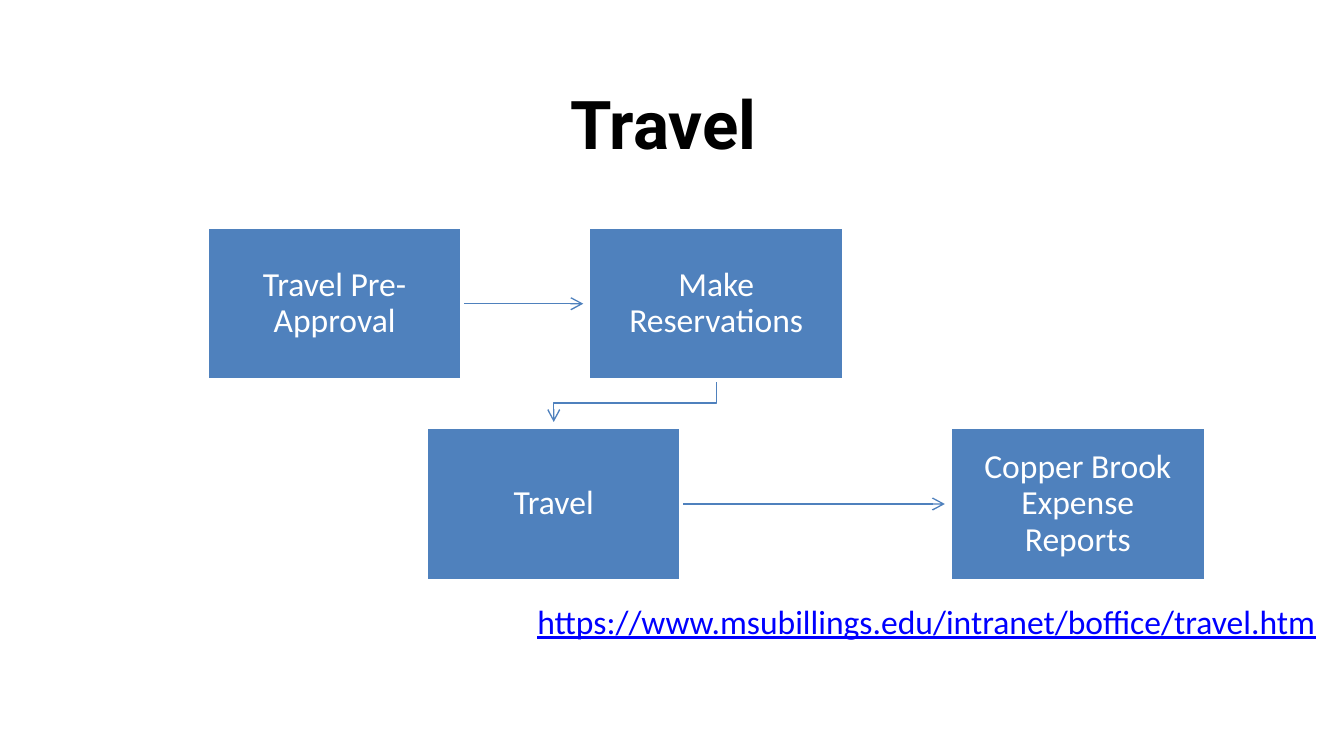
import pptx
import pptx.util
import pptx.dml.color
import pptx.enum.shapes
import pptx.enum.text
import pptx.oxml.ns
import lxml.etree
from dataclasses import dataclass


@dataclass(frozen=True)
class Theme:
    blue: str = "4F81BD"
    white: str = "FFFFFF"
    black: str = "000000"
    link: str = "0000FF"
    heading_font: str = "Roboto"
    body_font: str = "Calibri"
    heading_size: int = 36
    body_size: int = 18
    border: float = 2
    arrow: float = 0.75


theme = Theme()
rgb = pptx.dml.color.RGBColor.from_string
qn = pptx.oxml.ns.qn
center = pptx.enum.text.PP_ALIGN.CENTER
middle = pptx.enum.text.MSO_ANCHOR.MIDDLE


def write(box, text, font_name, size, color):
    box.text_frame.word_wrap = True
    para = box.text_frame.paragraphs[0]
    para.text = text
    para.font.name = font_name
    para.font.size = pptx.util.Pt(size)
    para.font.color.rgb = rgb(color)
    return para


def style_arrow(arrow):
    arrow.line.color.rgb = rgb(theme.blue)
    arrow.line.width = pptx.util.Pt(theme.arrow)
    line = arrow.line._get_or_add_ln()
    lxml.etree.SubElement(line, qn("a:tailEnd"), type="arrow")


deck = pptx.Presentation()
deck.slide_width = pptx.util.Inches(10)
deck.slide_height = deck.slide_width * 9 // 16
page = deck.slides.add_slide(deck.slide_layouts[6])
column = deck.slide_width / 100
row = deck.slide_height / 56.25

title = page.shapes.add_textbox(
    int(5 * column), int(4.4 * row), int(90 * column), int(9.4 * row))
title.text_frame.vertical_anchor = middle
para = write(title, "Travel ", theme.heading_font, theme.heading_size, theme.black)
para.alignment = center
para.font.bold = True

box_width, box_height = 19, 11.4
top_row, bottom_row = 16.9, 31.8
gap = 0.4
steps = [
    ("Travel Pre-Approval", 15.4, top_row),
    ("Make Reservations", 43.8, top_row),
    ("Travel", 31.7, bottom_row),
    ("Copper Brook Expense Reports", 70.7, bottom_row),
]

for start, end in ((steps[0], steps[1]), (steps[2], steps[3])):
    level = int((start[2] + box_height / 2) * row)
    arrow = page.shapes.add_connector(
        pptx.enum.shapes.MSO_CONNECTOR.STRAIGHT,
        int((start[1] + box_width) * column), level,
        int((end[1] - gap) * column), level)
    style_arrow(arrow)
    lxml.etree.SubElement(arrow._element.spPr, qn("a:effectLst"))

from_x = int((steps[1][1] + box_width / 2) * column)
to_x = int((steps[2][1] + box_width / 2) * column)
turn_y = int(30 * row)
builder = page.shapes.build_freeform(from_x, int((top_row + box_height) * row))
builder.add_line_segments(
    [(from_x, turn_y), (to_x, turn_y), (to_x, int((bottom_row - gap) * row))],
    close=False)
elbow = builder.convert_to_shape()
elbow.fill.background()
elbow.shadow.inherit = False
style_arrow(elbow)

for text, left, top in steps:
    box = page.shapes.add_shape(
        pptx.enum.shapes.MSO_SHAPE.RECTANGLE,
        int(left * column), int(top * row),
        int(box_width * column), int(box_height * row))
    box.shadow.inherit = False
    box.fill.solid()
    box.fill.fore_color.rgb = rgb(theme.blue)
    box.line.color.rgb = rgb(theme.white)
    box.line.width = pptx.util.Pt(theme.border)
    frame = box.text_frame
    frame.vertical_anchor = middle
    frame.margin_left = frame.margin_right = int(1.4 * column)
    frame.margin_top = frame.margin_bottom = int(1.4 * row)
    para = write(box, text, theme.body_font, theme.body_size, theme.white)
    para.alignment = center
    para.line_spacing = 0.9

address = page.shapes.add_textbox(
    int(39 * column), int(44.2 * row), int(61 * column), int(4 * row))
para = write(address, "https://www.msubillings.edu/intranet/boffice/travel.htm",
             theme.body_font, theme.body_size, theme.link)
para.font.underline = True

deck.save("out.pptx")
